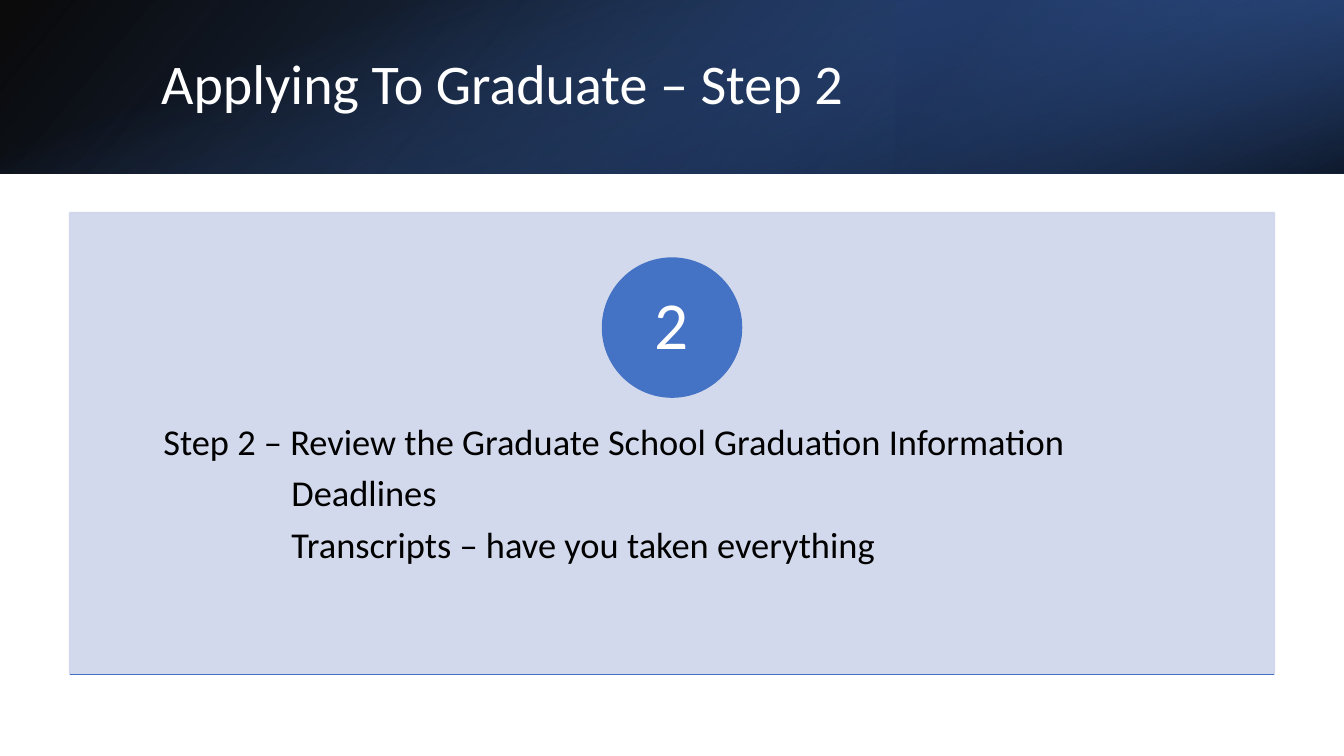
from dataclasses import dataclass

from lxml.etree import SubElement
from pptx import Presentation
from pptx.dml.color import RGBColor
from pptx.enum.shapes import MSO_CONNECTOR, MSO_SHAPE
from pptx.enum.text import MSO_ANCHOR, PP_ALIGN
from pptx.oxml import parse_xml
from pptx.oxml.ns import nsdecls, qn
from pptx.shapes.autoshape import Shape
from pptx.slide import Slide
from pptx.text.text import TextFrame
from pptx.util import Inches, Pt

BLACK = RGBColor(0x00, 0x00, 0x00)
WHITE = RGBColor(0xFF, 0xFF, 0xFF)
NAVY = RGBColor(0x20, 0x38, 0x64)
DEEP = RGBColor(0x2F, 0x55, 0x97)
BLUE = RGBColor(0x44, 0x72, 0xC4)
PALE = RGBColor(0xCF, 0xD5, 0xEA)

WIDE, HIGH = 13.33, 7.5
BAND = 1.72
LEFT, TOP, SPAN, TALL = 0.69, 2.11, 11.95, 4.58
DISC = 1.38
TAB = 1.27


@dataclass(frozen=True)
class Stop:
    pos: int
    color: RGBColor
    alpha: int


@dataclass(frozen=True)
class Layer:
    """One gradient sheet of the header band."""
    box: tuple[float, float, float, float]
    turn: int
    flip: bool
    angle: int
    stops: tuple[Stop, Stop]


@dataclass(frozen=True)
class Style:
    size: float
    color: RGBColor
    align: PP_ALIGN = PP_ALIGN.LEFT
    after: float = 0
    tab: float = 0


LAYERS = [
    Layer((0, 0, WIDE, BAND), 0, True, 140,
          (Stop(0, BLACK, 96), Stop(100, DEEP, 100))),
    Layer((WIDE * 2 / 3, 0, WIDE / 3, BAND), 180, True, 320,
          (Stop(19, NAVY, 68), Stop(100, BLUE, 79))),
    Layer(((WIDE - BAND) / 2, (BAND - WIDE) / 2, BAND, WIDE), 90, False, 340,
          (Stop(23, BLUE, 0), Stop(99, BLACK, 74))),
]
STEPS = [
    "Step 2 – Review the Graduate School Graduation Information",
    "\tDeadlines",
    "\tTranscripts – have you taken everything",
]


def add_shape(slide: Slide, kind: MSO_SHAPE,
              box: tuple[float, float, float, float]) -> Shape:
    shape = slide.shapes.add_shape(kind, *(Inches(n) for n in box))
    shape.shadow.inherit = False
    return shape


def add_layer(slide: Slide, layer: Layer) -> None:
    shape = add_shape(slide, MSO_SHAPE.RECTANGLE, layer.box)
    shape.rotation = layer.turn
    shape.line.fill.background()
    props = shape._element.spPr
    if layer.flip:
        props.find(qn("a:xfrm")).set("flipH", "1")
    stops = "".join(
        f'<a:gs pos="{s.pos * 1000}"><a:srgbClr val="{s.color}">'
        f'<a:alpha val="{s.alpha * 1000}"/></a:srgbClr></a:gs>'
        for s in layer.stops)
    fill = parse_xml(
        f'<a:gradFill {nsdecls("a")} rotWithShape="1"><a:gsLst>{stops}</a:gsLst>'
        f'<a:lin ang="{layer.angle * 60000}" scaled="0"/></a:gradFill>')
    props.find(qn("a:prstGeom")).addnext(fill)


def paint(shape: Shape, color: RGBColor, alpha: int = 100) -> None:
    """Fill and outline a shape in one colour."""
    shape.fill.solid()
    shape.fill.fore_color.rgb = color
    shape.line.color.rgb = color
    shape.line.width = Pt(1)
    if alpha < 100:
        for tone in shape._element.spPr.iter(qn("a:srgbClr")):
            SubElement(tone, qn("a:alpha")).set("val", str(alpha * 1000))


def write(frame: TextFrame, lines: list[str], style: Style) -> None:
    frame.word_wrap = True
    for i, line in enumerate(lines):
        para = frame.add_paragraph() if i else frame.paragraphs[0]
        para.alignment = style.align
        para.line_spacing = 0.9
        para.space_after = Pt(style.after)
        if style.tab:
            tabs = SubElement(para._p.get_or_add_pPr(), qn("a:tabLst"))
            tab = SubElement(tabs, qn("a:tab"))
            tab.set("pos", str(Inches(style.tab)))
            tab.set("algn", "l")
        run = para.add_run()
        run.text = line
        run.font.name = "Calibri"
        run.font.size = Pt(style.size)
        run.font.color.rgb = style.color


def inset(frame: TextFrame, side: float, top: float, base: float) -> None:
    frame.margin_left = frame.margin_right = Inches(side)
    frame.margin_top, frame.margin_bottom = Inches(top), Inches(base)


def add_title(slide: Slide) -> None:
    box = slide.shapes.add_textbox(
        Inches(1.5), Inches(0.38), Inches(10.98), Inches(0.96))
    box.text_frame.vertical_anchor = MSO_ANCHOR.MIDDLE
    write(box.text_frame, ["Applying To Graduate – Step 2"], Style(40, WHITE))


def add_panel(slide: Slide) -> None:
    panel = add_shape(slide, MSO_SHAPE.RECTANGLE, (LEFT, TOP, SPAN, TALL))
    paint(panel, PALE, 90)
    frame = panel.text_frame
    frame.vertical_anchor = MSO_ANCHOR.TOP
    inset(frame, 0.93, 2.1, 0.45)
    write(frame, STEPS, Style(26, BLACK, after=8.5, tab=TAB))


def add_disc(slide: Slide) -> None:
    disc = add_shape(slide, MSO_SHAPE.OVAL,
                     ((WIDE - DISC) / 2, 2.56, DISC, DISC))
    paint(disc, BLUE)
    frame = disc.text_frame
    frame.vertical_anchor = MSO_ANCHOR.MIDDLE
    inset(frame, 0.1, 0.02, 0.02)
    write(frame, ["2"], Style(48, WHITE, PP_ALIGN.CENTER))


def add_rule(slide: Slide) -> None:
    base = Inches(TOP + TALL)
    rule = slide.shapes.add_connector(
        MSO_CONNECTOR.STRAIGHT, Inches(LEFT), base, Inches(LEFT + SPAN), base)
    rule.line.color.rgb = BLUE
    rule.line.width = Pt(1)
    SubElement(rule._element.spPr, qn("a:effectLst"))


def main() -> None:
    deck = Presentation()
    deck.slide_width, deck.slide_height = Inches(WIDE), Inches(HIGH)
    slide = deck.slides.add_slide(deck.slide_layouts[6])
    for layer in LAYERS:
        add_layer(slide, layer)
    add_title(slide)
    add_panel(slide)
    add_disc(slide)
    add_rule(slide)
    deck.save("out.pptx")


if __name__ == "__main__":
    main()
